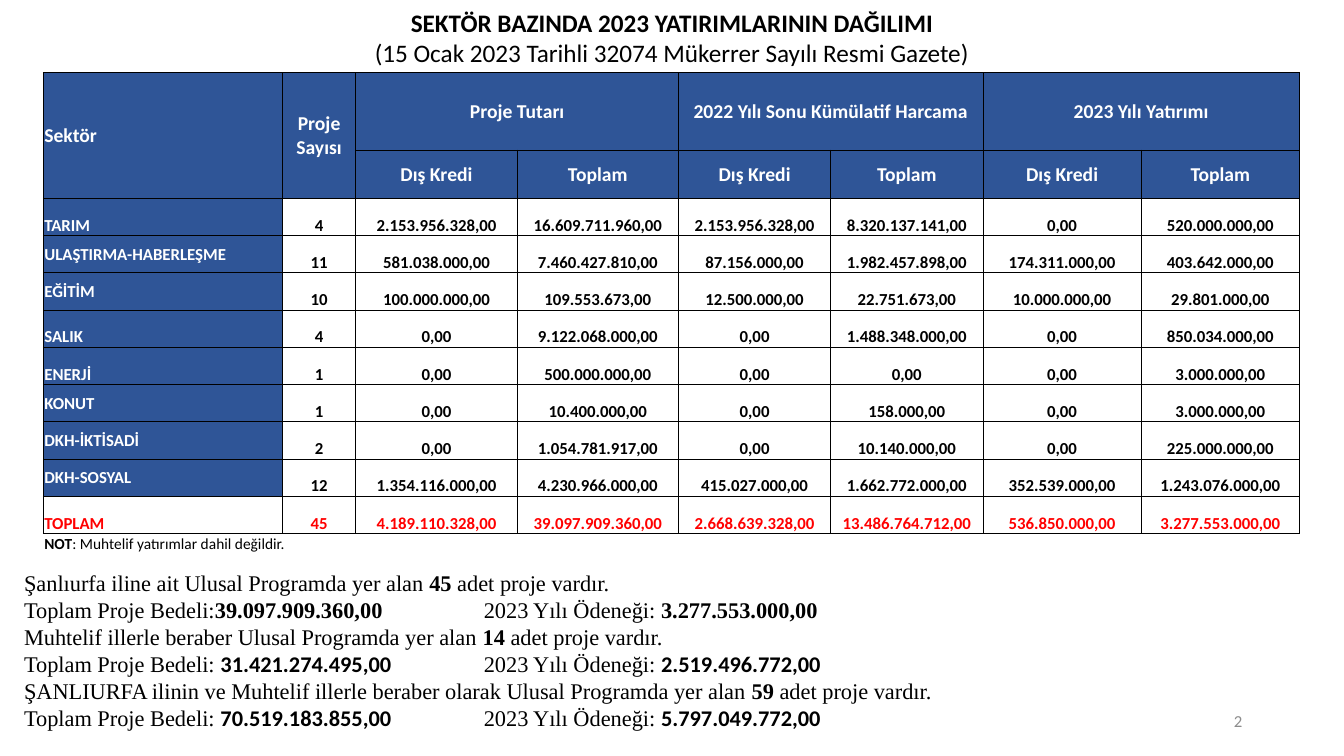
from lxml.etree import SubElement
from pptx import Presentation
from pptx.dml.color import RGBColor
from pptx.enum.shapes import MSO_SHAPE as Preset
from pptx.enum.text import MSO_ANCHOR as Anchor, PP_ALIGN as Align
from pptx.oxml.ns import qn
from pptx.util import Inches, Pt

BLUE, WHITE, BLACK, RED, GREY = "2F5597", "FFFFFF", "000000", "FF0000", "8C8C8C"
COLUMN_WIDTHS = [2.37, 0.73, 1.6, 1.6, 1.51, 1.51, 1.57, 1.57]
ROW_HEIGHTS = [0.77, 0.44] + [0.37] * 9 + [0.34]
GROUPS = ["Proje Tutarı", "2022 Yılı Sonu Kümülatif Harcama", "2023 Yılı Yatırımı"]
SECTORS = [
    ("TARIM", "4", "2.153.956.328,00", "16.609.711.960,00", "2.153.956.328,00",
     "8.320.137.141,00", "0,00", "520.000.000,00"),
    ("ULAŞTIRMA-HABERLEŞME", "11", "581.038.000,00", "7.460.427.810,00", "87.156.000,00",
     "1.982.457.898,00", "174.311.000,00", "403.642.000,00"),
    ("EĞİTİM", "10", "100.000.000,00", "109.553.673,00", "12.500.000,00",
     "22.751.673,00", "10.000.000,00", "29.801.000,00"),
    ("SALIK", "4", "0,00", "9.122.068.000,00", "0,00",
     "1.488.348.000,00", "0,00", "850.034.000,00"),
    ("ENERJİ", "1", "0,00", "500.000.000,00", "0,00", "0,00", "0,00", "3.000.000,00"),
    ("KONUT", "1", "0,00", "10.400.000,00", "0,00", "158.000,00", "0,00", "3.000.000,00"),
    ("DKH-İKTİSADİ", "2", "0,00", "1.054.781.917,00", "0,00",
     "10.140.000,00", "0,00", "225.000.000,00"),
    ("DKH-SOSYAL", "12", "1.354.116.000,00", "4.230.966.000,00", "415.027.000,00",
     "1.662.772.000,00", "352.539.000,00", "1.243.076.000,00"),
    ("TOPLAM", "45", "4.189.110.328,00", "39.097.909.360,00", "2.668.639.328,00",
     "13.486.764.712,00", "536.850.000,00", "3.277.553.000,00"),
]
BOTTOM_LABELS = {"TARIM", "SALIK", "ENERJİ", "TOPLAM"}
SUMMARY = [
    ("Şanlıurfa iline ait Ulusal Programda yer alan |45 |adet proje vardır.", "Times New Roman"),
    ("Toplam Proje Bedeli:|39.097.909.360,00|\t2023 Yılı Ödeneği: |3.277.553.000,00",
     "Times New Roman"),
    ("Muhtelif illerle beraber Ulusal Programda yer alan |14 |adet proje vardır.",
     "Times New Roman"),
    ("Toplam Proje Bedeli: |31.421.274.495,00|\t2023 Yılı Ödeneği: |2.519.496.772,00", "Calibri"),
    ("ŞANLIURFA ilinin ve Muhtelif illerle beraber olarak Ulusal Programda yer alan "
     "|59 |adet proje vardır.", "Times New Roman"),
    ("Toplam Proje Bedeli: |70.519.183.855,00|\t2023 Yılı Ödeneği: |5.797.049.772,00", "Calibri"),
]


def rgb(code):
    return RGBColor.from_string(code)


class SlideBuilder:
    """Draws styled elements on the current slide."""

    font = "Calibri"

    def __init__(self, slide):
        self.slide = slide

    def style(self, paragraph, size, color, bold=False, align=Align.LEFT, font=None):
        paragraph.alignment = align
        paragraph.font.name = font or self.font
        paragraph.font.size = Pt(size)
        paragraph.font.bold = bold
        paragraph.font.color.rgb = rgb(color)

    def mixed_runs(self, paragraph, text, bold_font=None):
        for index, part in enumerate(text.split("|")):
            if part:
                run = paragraph.add_run()
                run.text = part
                run.font.bold = index % 2 == 1
                if run.font.bold and bold_font:
                    run.font.name = bold_font

    def title(self, box, lines):
        shape = self.slide.shapes.add_shape(Preset.RECTANGLE, *map(Inches, box))
        shape.shadow.inherit = False
        shape.fill.solid()
        shape.fill.fore_color.rgb = rgb(WHITE)
        shape.line.fill.background()
        frame = shape.text_frame
        frame.vertical_anchor = Anchor.TOP
        frame.text = "\n".join(lines)
        for index, paragraph in enumerate(frame.paragraphs):
            self.style(paragraph, 18, BLACK, index == 0, Align.CENTER)

    def text_box(self, box, anchor=Anchor.TOP):
        frame = self.slide.shapes.add_textbox(*map(Inches, box)).text_frame
        frame.word_wrap = True
        frame.vertical_anchor = anchor
        return frame

    def page_number(self, box, text):
        frame = self.text_box(box, Anchor.MIDDLE)
        frame.text = text
        self.style(frame.paragraphs[0], 12, GREY, align=Align.RIGHT)

    def summary(self, box, lines, tab):
        frame = self.text_box(box)
        for index, (text, bold_font) in enumerate(lines):
            paragraph = frame.add_paragraph() if index else frame.paragraphs[0]
            properties = paragraph._p.get_or_add_pPr()
            tabs = SubElement(properties, qn("a:tabLst"))
            SubElement(tabs, qn("a:tab"), pos=str(Inches(tab)), algn="l")
            self.style(paragraph, 16, BLACK, font="Times New Roman")
            self.mixed_runs(paragraph, text, bold_font)

    def table(self, left, top, widths, heights):
        size = (len(heights), len(widths))
        box = (left, top, sum(widths), sum(heights))
        table = self.slide.shapes.add_table(*size, *map(Inches, box)).table
        table.first_row = table.horz_banding = False
        for column, width in zip(table.columns, widths):
            column.width = Inches(width)
        for row, height in zip(table.rows, heights):
            row.height = Inches(height)
        return table

    def border(self, cell, sides):
        for side in "LRTB":
            line = SubElement(cell._tc.get_or_add_tcPr(), qn(f"a:ln{side}"), w=str(Pt(0.75)))
            if side in sides:
                fill = SubElement(line, qn("a:solidFill"))
                SubElement(fill, qn("a:srgbClr"), val=BLACK)
            else:
                SubElement(line, qn("a:noFill"))

    def cell(self, cell, text, fill=None, color=BLACK, size=12, bold=True,
             align=Align.CENTER, anchor=Anchor.BOTTOM, sides="LRTB"):
        self.border(cell, sides)
        if fill:
            cell.fill.solid()
            cell.fill.fore_color.rgb = rgb(fill)
        else:
            cell.fill.background()
        cell.margin_left = cell.margin_right = cell.margin_top = Inches(0.01)
        cell.margin_bottom = 0
        cell.vertical_anchor = anchor
        paragraph = cell.text_frame.paragraphs[0]
        self.style(paragraph, size, color, bold, align)
        if "|" in text:
            self.mixed_runs(paragraph, text)
        else:
            paragraph.add_run().text = text

    def header(self, table):
        headings = [["Sektör", "Proje Sayısı"], ["", ""]]
        for group in GROUPS:
            headings[0] += [group, ""]
            headings[1] += ["Dış Kredi", "Toplam"]
        for row, texts in enumerate(headings):
            for column, text in enumerate(texts):
                self.cell(table.cell(row, column), text, BLUE, WHITE, 14,
                          align=Align.CENTER if column else Align.LEFT, anchor=Anchor.MIDDLE)
        for column in (0, 1):
            table.cell(0, column).merge(table.cell(1, column))
        for column in (2, 4, 6):
            table.cell(0, column).merge(table.cell(0, column + 1))

    def sector_row(self, table, row, values):
        label = values[0]
        total = label == "TOPLAM"
        self.cell(table.cell(row, 0), label, None if total else BLUE, RED if total else WHITE,
                  align=Align.LEFT,
                  anchor=Anchor.BOTTOM if label in BOTTOM_LABELS else Anchor.MIDDLE)
        for column, value in enumerate(values[1:], 1):
            self.cell(table.cell(row, column), value, color=RED if total else BLACK)

    def note_row(self, table, row, text):
        last = len(table.columns) - 1
        for column in range(last + 1):
            self.cell(table.cell(row, column), "" if column else text, size=11, bold=False,
                      align=Align.LEFT, anchor=Anchor.TOP, sides="T")
        table.cell(row, 0).merge(table.cell(row, last))


def main():
    presentation = Presentation()
    presentation.slide_width, presentation.slide_height = Inches(13.33), Inches(7.5)
    builder = SlideBuilder(presentation.slides.add_slide(presentation.slide_layouts[6]))
    builder.page_number((9.42, 6.95, 3, 0.4), "2")
    builder.title((0, 0.02, 13.33, 1.01), ["SEKTÖR BAZINDA 2023 YATIRIMLARININ DAĞILIMI",
                                           "(15 Ocak 2023 Tarihli 32074 Mükerrer Sayılı Resmi Gazete)"])
    builder.summary((0.14, 5.6, 10.17, 1.78), SUMMARY, 4.56)
    table = builder.table(0.43, 0.72, COLUMN_WIDTHS, ROW_HEIGHTS)
    builder.header(table)
    for row, values in enumerate(SECTORS, 2):
        builder.sector_row(table, row, values)
    builder.note_row(table, len(ROW_HEIGHTS) - 1, "|NOT|: Muhtelif yatırımlar dahil değildir.")
    presentation.save("out.pptx")


if __name__ == "__main__":
    main()
